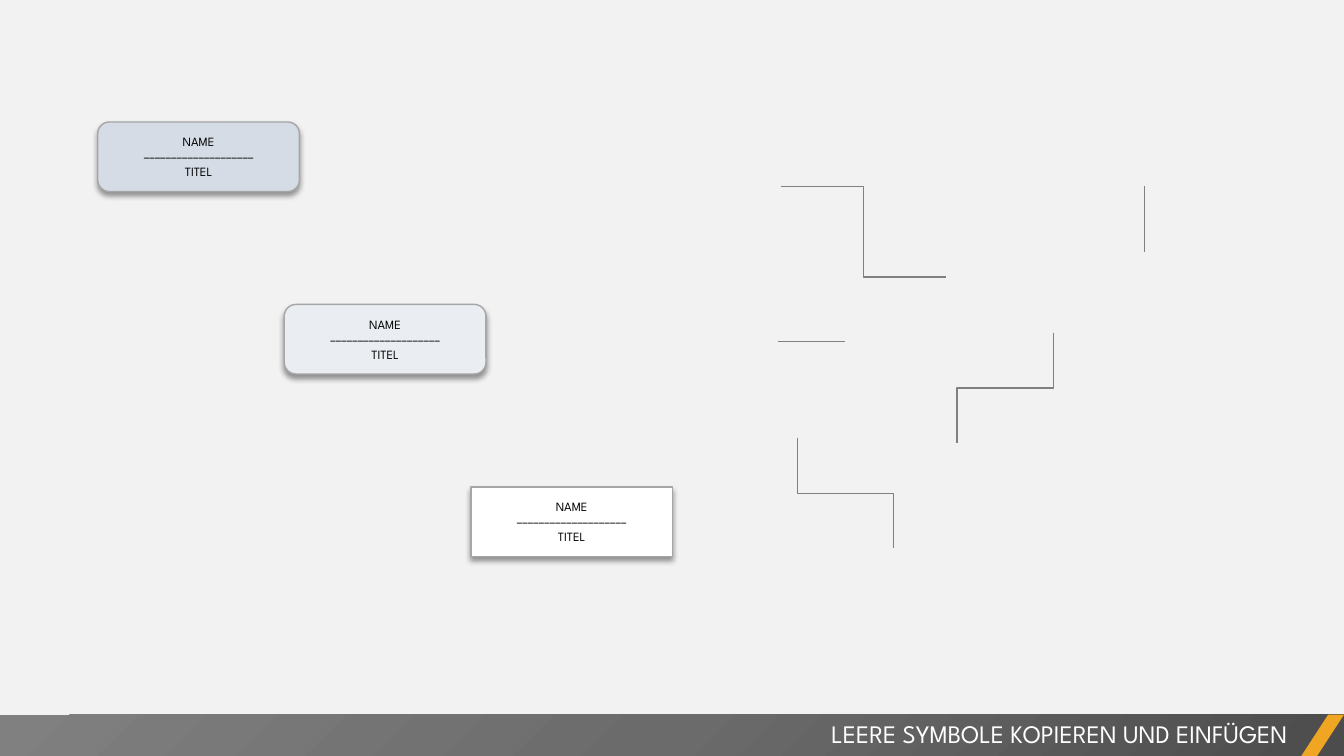
from dataclasses import dataclass

from pptx import Presentation
from pptx.dml.color import RGBColor
from pptx.enum.shapes import MSO_CONNECTOR as Link, MSO_SHAPE as Shape
from pptx.enum.text import MSO_ANCHOR as Anchor, MSO_AUTO_SIZE as AutoSize, PP_ALIGN as Align
from pptx.oxml import parse_xml
from pptx.oxml.ns import nsdecls
from pptx.util import Inches, Pt


@dataclass(frozen=True)
class Theme:
    font: str = "League Spartan"
    title_size: int = 18
    card_size: int = 9
    line_width: int = 1
    background: str = "F2F2F2"
    accent: str = "F0A622"
    title: str = "FFFFFF"
    text: str = "000000"
    connector: str = "808080"
    card_line: str = "A6A6A6"
    card_fills: tuple = ("D6DCE5", "EAEEF3", "FFFFFF")
    bar_stops: tuple = ((0, "4C4C4C"), (50, "6B6B6B"), (100, "808080"))


THEME = Theme()


def color(code):
    return RGBColor.from_string(code)


def style_text(frame, size, code, align):
    for paragraph in frame.paragraphs:
        paragraph.alignment = align
        for run in paragraph.runs:
            run.font.name = THEME.font
            run.font.size = Pt(size)
            run.font.color.rgb = color(code)


def set_margins(frame, side, top):
    frame.margin_left = frame.margin_right = Inches(side)
    frame.margin_top = frame.margin_bottom = Inches(top)


def style_line(line, code):
    line.color.rgb = color(code)
    line.width = Pt(THEME.line_width)


def add_plain(slide, kind, left, top, width, height):
    shape = slide.shapes.add_shape(kind, Inches(left), Inches(top), Inches(width), Inches(height))
    shape.shadow.inherit = False
    return shape


def fill_radial(shape, stops):
    shape.fill.gradient()
    gradient = shape._element.spPr.find(".//{*}gradFill")
    stop_xml = "".join(
        f'<a:gs pos="{position * 1000}"><a:srgbClr val="{code}"/></a:gs>' for position, code in stops
    )
    gradient.getparent().replace(gradient, parse_xml(
        f'<a:gradFill {nsdecls("a")} rotWithShape="1"><a:gsLst>{stop_xml}</a:gsLst>'
        '<a:path path="circle"><a:fillToRect l="100000" t="100000"/></a:path></a:gradFill>'
    ))


def add_footer(slide, left, top, width, height):
    bar = add_plain(slide, Shape.RECTANGLE, left, top, width, height)
    fill_radial(bar, THEME.bar_stops)
    bar.line.fill.background()

    slant_width = 0.43
    slant = add_plain(slide, Shape.PARALLELOGRAM, left + width - slant_width, top, slant_width, height)
    slant.adjustments[0] = 0.65
    slant.fill.solid()
    slant.fill.fore_color.rgb = color(THEME.accent)
    slant.line.fill.background()

    heading = slide.shapes.title
    heading.left, heading.top = Inches(left + 5.25), Inches(top - 0.01)
    heading.width, heading.height = Inches(7.62), Inches(0.4)
    frame = heading.text_frame
    frame.text = "LEERE SYMBOLE KOPIEREN UND EINFÜGEN"
    frame.word_wrap = True
    frame.auto_size = AutoSize.NONE
    frame.vertical_anchor = Anchor.TOP
    set_margins(frame, 0.1, 0.05)
    style_text(frame, THEME.title_size, THEME.title, Align.RIGHT)
    slide.shapes._spTree.append(heading._element)


def add_card(slide, kind, fill, left, top, width, height):
    card = add_plain(slide, kind, left, top, width, height)
    card.fill.solid()
    card.fill.fore_color.rgb = color(fill)
    style_line(card.line, THEME.card_line)
    card._element.spPr.find("{*}effectLst").append(parse_xml(
        f'<a:outerShdw {nsdecls("a")} blurRad="{Pt(4)}" dist="{Pt(3)}" dir="5400000" '
        'algn="t" rotWithShape="0"><a:srgbClr val="000000"><a:alpha val="40000"/>'
        '</a:srgbClr></a:outerShdw>'
    ))
    frame = card.text_frame
    frame.text = "\n".join(("NAME", "–" * 20, "TITEL"))
    frame.word_wrap = True
    frame.vertical_anchor = Anchor.MIDDLE
    set_margins(frame, 0.02, 0.02)
    style_text(frame, THEME.card_size, THEME.text, Align.CENTER)


def add_cards(slide, left, top, step_x, step_y):
    kinds = (Shape.FLOWCHART_ALTERNATE_PROCESS, Shape.FLOWCHART_ALTERNATE_PROCESS, Shape.RECTANGLE)
    for level, (kind, fill) in enumerate(zip(kinds, THEME.card_fills)):
        add_card(slide, kind, fill, left + level * step_x, top + level * step_y, 2, 0.69)


def add_link(slide, kind, x1, y1, x2, y2):
    link = slide.shapes.add_connector(kind, Inches(x1), Inches(y1), Inches(x2), Inches(y2))
    style_line(link.line, THEME.connector)
    link._element.spPr.append(parse_xml(f'<a:effectLst {nsdecls("a")}/>'))
    return link


def add_upright_elbow(slide, x1, y1, x2, y2):
    center_x, center_y = (x1 + x2) / 2, (y1 + y2) / 2
    half_run, half_rise = (y2 - y1) / 2, abs(x2 - x1) / 2
    if x2 > x1:
        half_run, angle = -half_run, 270
    else:
        angle = 90
    link = add_link(slide, Link.ELBOW, center_x - half_run, center_y - half_rise,
                    center_x + half_run, center_y + half_rise)
    link._element.spPr.find("{*}xfrm").set("rot", str(angle * 60000))


def add_connectors(slide, left, top):
    add_link(slide, Link.ELBOW, left + 0.03, top, left + 1.66, top + 0.9)
    add_link(slide, Link.STRAIGHT, left, top + 1.54, left + 0.66, top + 1.54)
    add_link(slide, Link.STRAIGHT, left + 3.63, top, left + 3.63, top + 0.65)
    add_upright_elbow(slide, left + 2.73, top + 1.45, left + 1.77, top + 2.55)
    add_upright_elbow(slide, left + 0.19, top + 2.5, left + 1.14, top + 3.59)


def main():
    deck = Presentation()
    deck.slide_width, deck.slide_height = Inches(13.33), Inches(7.5)
    slide = deck.slides.add_slide(deck.slide_layouts[5])
    slide.background.fill.solid()
    slide.background.fill.fore_color.rgb = color(THEME.background)
    add_footer(slide, 0, 7.09, 13.33, 0.42)
    add_connectors(slide, 7.72, 1.85)
    add_cards(slide, 0.97, 1.21, 1.85, 1.81)
    deck.save("out.pptx")


if __name__ == "__main__":
    main()
